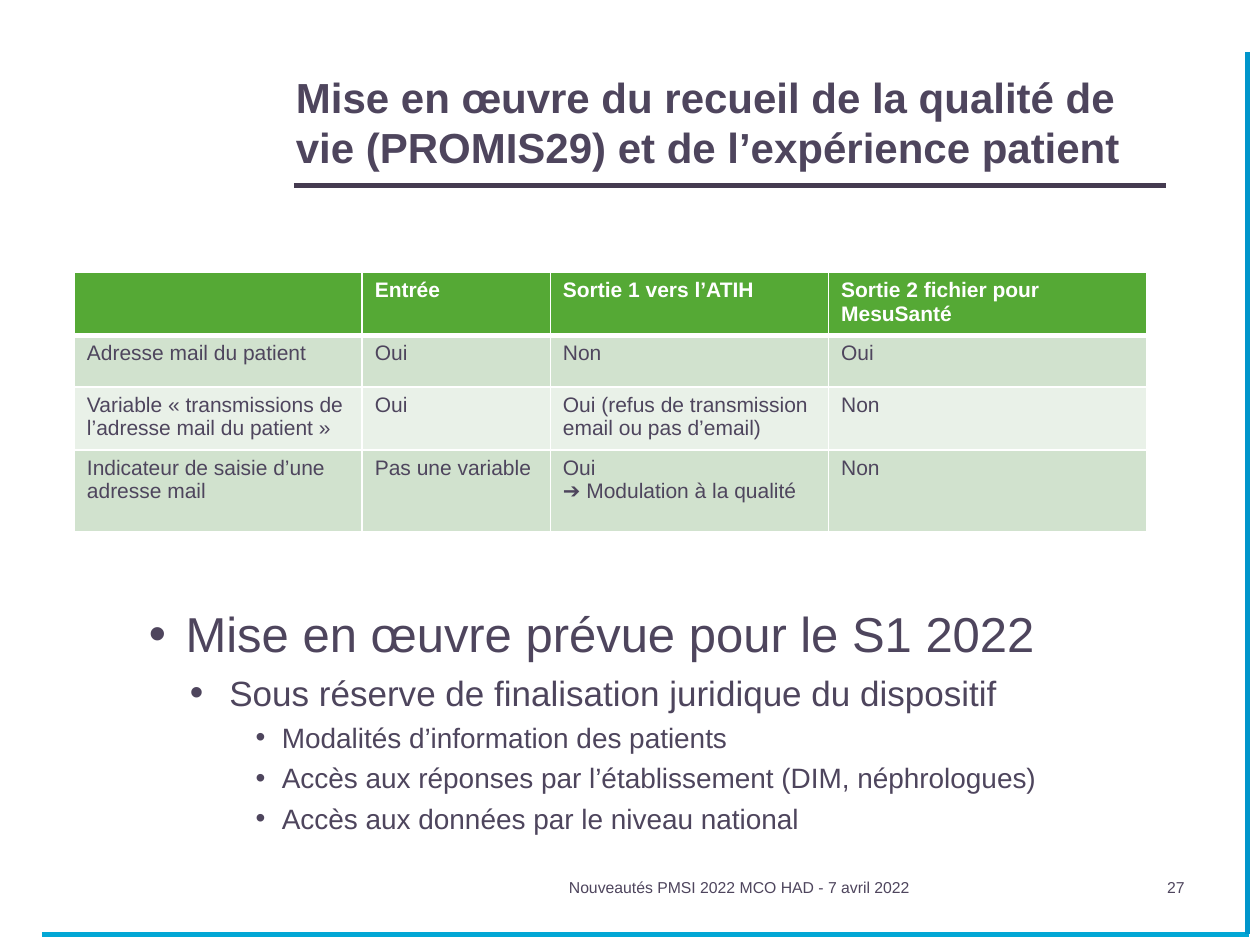
from lxml import etree
from pptx import Presentation, util as u
from pptx.dml.color import RGBColor
from pptx.enum import shapes, text
from pptx.oxml import ns

COLORS = {
    "text": "4E455D", "rule": "453B50", "side": "0095CB", "bottom": "02A7D5",
    "white": "FFFFFF", "header": "55A935", "band": "D1E2CE", "light": "E9F1E8",
}


class SlideBuilder:
    """Holds the style and the current slide; lengths are in points."""

    font_name = "Arial"

    def __init__(self, slide):
        self.slide = slide

    def color(self, name):
        return RGBColor.from_string(COLORS[name])

    def style(self, paragraph, size, color="text", bold=False):
        font = paragraph.font
        font.name, font.size, font.bold = self.font_name, u.Pt(size), bold
        font.color.rgb = self.color(color)

    def line(self, x1, y1, x2, y2, color):
        rule = self.slide.shapes.add_connector(
            shapes.MSO_CONNECTOR.STRAIGHT, *map(u.Pt, (x1, y1, x2, y2)))
        rule.line.width = u.Pt(3)
        rule.line.color.rgb = self.color(color)
        etree.SubElement(rule._element.spPr, ns.qn("a:effectLst"))

    def frame(self, left, top, width, height, anchor=text.MSO_ANCHOR.TOP):
        box = self.slide.shapes.add_textbox(*map(u.Pt, (left, top, width, height)))
        box.text_frame.word_wrap = True
        box.text_frame.vertical_anchor = anchor
        return box.text_frame

    def label(self, wording, box, size, bold=False,
              align=text.PP_ALIGN.LEFT, anchor=text.MSO_ANCHOR.TOP):
        paragraph = self.frame(*box, anchor).paragraphs[0]
        paragraph.text, paragraph.alignment = wording, align
        self.style(paragraph, size, bold=bold)

    def bullets(self, items, levels, box):
        frame = self.frame(*box)
        for i, (level, wording) in enumerate(items):
            size, margin, indent, before, bullet_percent = levels[level]
            paragraph = frame.add_paragraph() if i else frame.paragraphs[0]
            paragraph.text, paragraph.level = wording, level
            if i:
                paragraph.space_before = u.Pt(before)
            props = paragraph._p.get_or_add_pPr()
            props.set("marL", str(u.Pt(margin)))
            props.set("indent", str(u.Pt(indent)))
            etree.SubElement(props, ns.qn("a:buSzPct"), val=str(bullet_percent * 1000))
            etree.SubElement(props, ns.qn("a:buFont"), typeface=self.font_name)
            etree.SubElement(props, ns.qn("a:buChar"), char="•")
            self.style(paragraph, size)

    def borders(self, cell, widths):
        props = cell._tc.get_or_add_tcPr()
        for i, (side, width) in enumerate(zip("LRTB", widths)):
            border = etree.Element(ns.qn(f"a:ln{side}"), w=str(u.Pt(width)))
            fill = etree.SubElement(border, ns.qn("a:solidFill"))
            etree.SubElement(fill, ns.qn("a:srgbClr"), val=COLORS["white"])
            props.insert(i, border)

    def table(self, rows, left, top, widths, heights, size):
        table = self.slide.shapes.add_table(
            len(rows), len(widths),
            *map(u.Pt, (left, top, sum(widths), sum(heights)))).table
        for column, width in zip(table.columns, widths):
            column.width = u.Pt(width)
        for r, (row, height) in enumerate(zip(rows, heights)):
            table.rows[r].height = u.Pt(height)
            header = r == 0
            fill = "header" if header else ("band" if r % 2 else "light")
            for c, wording in enumerate(row):
                cell = table.cell(r, c)
                cell.text = wording
                cell.fill.solid()
                cell.fill.fore_color.rgb = self.color(fill)
                self.borders(cell, (1, 1, 3 if r == 1 else 1, 3 if header else 1))
                for paragraph in cell.text_frame.paragraphs:
                    self.style(paragraph, size, "white" if header else "text", header)


def main():
    deck = Presentation()
    deck.slide_width, deck.slide_height = u.Pt(720), u.Pt(540)
    page = SlideBuilder(deck.slides.add_slide(deck.slide_layouts[6]))

    # Frame lines and title rule
    page.line(168, 106, 666, 106, "rule")
    page.line(24, 534, 714, 534, "bottom")
    page.line(713, 534, 713, 30, "side")

    # Title
    page.label("Mise en œuvre du recueil de la qualité de vie (PROMIS29) "
               "et de l’expérience patient",
               (162, 24, 522, 78), 24, bold=True, anchor=text.MSO_ANCHOR.BOTTOM)

    # Variables collected and sent
    variables = [
        ("", "Entrée", "Sortie 1 vers l’ATIH", "Sortie 2 fichier pour MesuSanté"),
        ("Adresse mail du patient", "Oui", "Non", "Oui"),
        ("Variable « transmissions de l’adresse mail du patient »", "Oui",
         "Oui (refus de transmission email ou pas d’email)", "Non"),
        ("Indicateur de saisie d’une adresse mail", "Pas une variable",
         "Oui\n➔ Modulation à la qualité", "Non"),
    ]
    page.table(variables, 42.5, 155.5, (164.5, 107.5, 159, 182),
               (34, 29.5, 34.5, 47), 12)

    # Schedule: size, margin, indent, space before, bullet percent per level
    levels = [(28, 35, -21, 0, 100), (20, 60, -22.5, 5, 110), (16, 90, -15, 4, 100)]
    schedule = [
        (0, "Mise en œuvre prévue pour le S1 2022"),
        (1, "Sous réserve de finalisation juridique du dispositif"),
        (2, "Modalités d’information des patients"),
        (2, "Accès aux réponses par l’établissement (DIM, néphrologues)"),
        (2, "Accès aux données par le niveau national"),
    ]
    page.bullets(schedule, levels, (64, 341.5, 618, 156))

    # Footer
    page.label("Nouveautés PMSI 2022 MCO HAD - 7 avril 2022", (318, 498, 228, 36), 9)
    page.label("27", (552, 498, 132, 32), 9, align=text.PP_ALIGN.RIGHT)

    deck.save("out.pptx")


if __name__ == "__main__":
    main()
